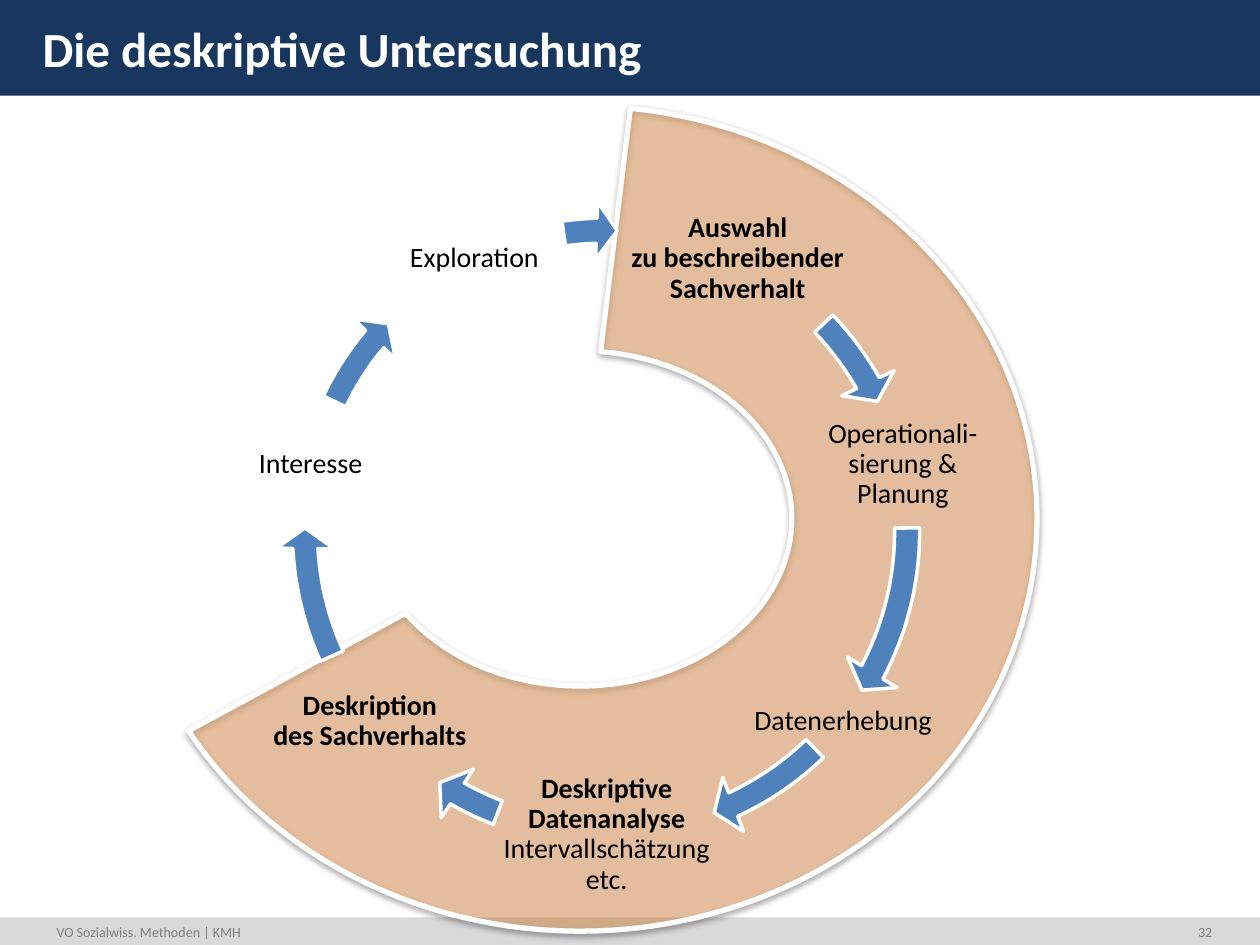
from dataclasses import dataclass

from lxml.etree import SubElement
from pptx import Presentation
from pptx.dml.color import RGBColor
from pptx.enum.shapes import MSO_SHAPE
from pptx.enum.text import MSO_ANCHOR, PP_ALIGN
from pptx.oxml.ns import qn
from pptx.slide import Slide
from pptx.util import Inches, Pt

CELL = 0.1  # inches: the slide is 100 columns by 75 rows


def grid(*cells):
    return [Inches(cell * CELL) for cell in cells]


def color(hex_code):
    return RGBColor.from_string(hex_code)


def angles(*degrees):
    """Turn degrees into the normalised units of shape adjustments."""
    return [degree * 0.6 for degree in degrees]


@dataclass
class CycleSlide:
    slide: Slide
    font: str = "Calibri"
    navy: str = "17375E"
    blue: str = "4F81BD"
    orange: str = "F79646"
    light_gray: str = "D9D9D9"
    gray: str = "808080"
    white: str = "FFFFFF"
    black: str = "000000"

    def shape(self, kind, box, fill, outline=0, adjustments=()):
        shape = self.slide.shapes.add_shape(kind, *grid(*box))
        shape.shadow.inherit = False
        shape.fill.solid()
        shape.fill.fore_color.rgb = color(fill)
        if outline:
            shape.line.color.rgb = color(self.white)
            shape.line.width = Pt(outline)
        else:
            shape.line.fill.background()
        for index, value in enumerate(adjustments):
            shape.adjustments[index] = value
        return shape

    def bar(self, top, height, fill):
        self.shape(MSO_SHAPE.RECTANGLE, (0, top, 100, height), fill)

    def sector(self, box, start, end, thickness):
        """Draw the translucent, shadowed ring that marks the main steps."""
        ring = self.shape(MSO_SHAPE.BLOCK_ARC, box, self.orange, 3,
                          angles(start, end) + [thickness])
        properties = ring._element.spPr
        fill = properties.find(qn("a:solidFill")).find(qn("a:srgbClr"))
        SubElement(fill, qn("a:alpha"), val="40000")
        shadow = SubElement(properties.find(qn("a:effectLst")), qn("a:outerShdw"),
                            blurRad="40000", dist="20000", dir="5400000", rotWithShape="0")
        shade = SubElement(shadow, qn("a:srgbClr"), val=self.black)
        SubElement(shade, qn("a:alpha"), val="38000")

    def arrow(self, start, end):
        self.shape(MSO_SHAPE.CIRCULAR_ARROW, (21.9, 16, 52.4, 52.4), self.blue, 2,
                   [0.038, *angles(3.92, end, start), 0.044])

    def text(self, box, parts, size, ink, align=PP_ALIGN.LEFT):
        """Write (lines, bold) parts into one paragraph, each line as a run."""
        frame = self.slide.shapes.add_textbox(*grid(*box)).text_frame
        frame.word_wrap = True
        paragraph = frame.paragraphs[0]
        paragraph.alignment = align
        lines = [(line, bold) for part, bold in parts for line in part.split("\n")]
        for index, (line, bold) in enumerate(lines):
            if index:
                paragraph.add_line_break()
            run = paragraph.add_run()
            run.text = line
            run.font.name = self.font
            run.font.size = Pt(size)
            run.font.bold = bold
            run.font.color.rgb = color(ink)
        return frame

    def step(self, center, middle, width, parts, height=10.1):
        box = center - width / 2, middle - height / 2, width, height
        frame = self.text(box, parts, 16, self.black, PP_ALIGN.CENTER)
        frame.vertical_anchor = MSO_ANCHOR.MIDDLE
        frame.margin_left = frame.margin_right = Inches(0.02)
        frame.margin_top = frame.margin_bottom = Inches(0.02)
        frame.paragraphs[0].line_spacing = 0.9


def main():
    presentation = Presentation()
    presentation.slide_width, presentation.slide_height = grid(100, 75)
    cycle = CycleSlide(presentation.slides.add_slide(presentation.slide_layouts[6]))

    cycle.bar(72.8, 2.2, cycle.light_gray)
    cycle.bar(0, 7.6, cycle.navy)
    cycle.text((3.5, 72.8, 29.9, 2.4), [("VO Sozialwiss. Methoden | KMH", False)], 8, cycle.gray)
    cycle.text((93, 72.8, 4.2, 2.4), [("32", False)], 8, cycle.gray, PP_ALIGN.RIGHT)
    cycle.sector((9.8, 8.4, 72.5, 65.5), 276.97, 151.54, 0.297)
    cycle.text((2.4, 1, 94.4, 5), [("Die deskriptive Untersuchung", True)], 28, cycle.white)

    upper, central, lower, bottom = 20.55, 36.85, 57.25, 66.25
    cycle.step(58.55, upper, 19.1, [("Auswahl\nzu beschreibender Sachverhalt", True)])
    cycle.step(71.65, central, 21.9, [("Operationali-\nsierung &\nPlanung", False)])
    cycle.step(66.9, lower, 15.2, [("Datenerhebung", False)], height=4.7)
    cycle.step(48.15, bottom, 17.3, [("Deskriptive\nDatenanalyse", True),
                                     ("Intervallschätzung etc.", False)])
    cycle.step(29.35, lower, 22.9, [("Deskription\ndes Sachverhalts", True)])
    cycle.step(24.65, central, 10.1, [("Interesse", False)])
    cycle.step(37.65, upper, 14.1, [("Exploration", False)])

    for start, end in [(316.31, 330.44), (359.3, 27.85), (46.1, 65.01), (111.08, 119.6),
                       (155.59, 176.79), (205.64, 219.77), (261.93, 268.21)]:
        cycle.arrow(start, end)

    presentation.save("out.pptx")


if __name__ == "__main__":
    main()
